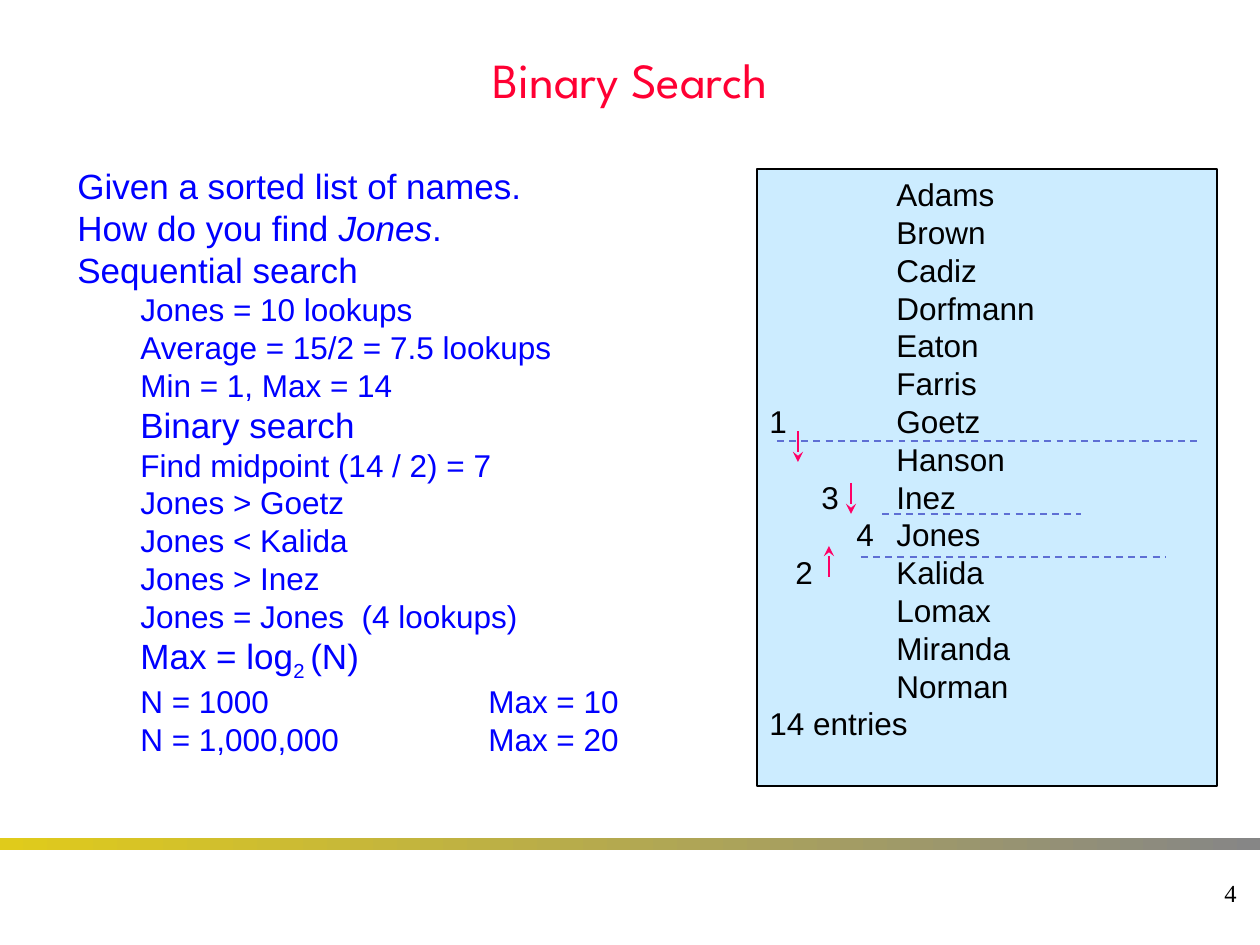
from dataclasses import dataclass
from typing import Optional

from lxml import etree
from pptx import Presentation
from pptx import util as u
from pptx.dml.color import RGBColor
from pptx.enum import dml, shapes, text
from pptx.oxml.ns import qn

PX = 914400 / 126
BLUE = "0000FF"
BLACK = "000000"
DASH_BLUE = "5E6FD4"
ARROW_PINK = "FF0066"


@dataclass
class Box:
    left: int
    top: int
    width: int
    height: int


@dataclass
class Line:
    x1: int
    y1: int
    x2: int
    y2: int
    color: str
    arrow: bool = False


@dataclass
class Style:
    size: int
    color: str
    face: str = "Arial"
    align: text.PP_ALIGN = text.PP_ALIGN.LEFT


@dataclass
class Point:
    words: str
    size: int = 18
    indent: int = 63
    italic: Optional[str] = None
    subscript: Optional[str] = None


def px(length: int) -> u.Emu:
    return u.Emu(round(length * PX))


def rgb(value: str) -> RGBColor:
    return RGBColor.from_string(value)


def place(box: Box) -> tuple:
    return px(box.left), px(box.top), px(box.width), px(box.height)


def add_rect(slide, box: Box):
    rect = slide.shapes.add_shape(shapes.MSO_SHAPE.RECTANGLE, *place(box))
    rect.shadow.inherit = False
    return rect


def add_text(slide, box: Box, anchor: text.MSO_ANCHOR):
    frame = slide.shapes.add_textbox(*place(box)).text_frame
    frame.word_wrap = True
    frame.vertical_anchor = anchor
    return frame


def next_paragraph(frame, index: int):
    return frame.add_paragraph() if index else frame.paragraphs[0]


def format_paragraph(paragraph, style: Style, tabs: tuple = (), indent: int = 0) -> None:
    props = paragraph._p.get_or_add_pPr()
    if indent:
        props.set("marL", str(px(indent)))
    if tabs:
        stops = etree.SubElement(props, qn("a:tabLst"))
        for stop in tabs:
            etree.SubElement(stops, qn("a:tab"), pos=str(px(stop)), algn="l")
    paragraph.alignment = style.align
    paragraph.font.size = u.Pt(style.size)
    paragraph.font.name = style.face
    paragraph.font.color.rgb = rgb(style.color)


def add_run(paragraph, words: str):
    run = paragraph.add_run()
    run.text = words
    return run


def add_label(slide, box: Box, words: str, style: Style) -> None:
    paragraph = add_text(slide, box, text.MSO_ANCHOR.MIDDLE).paragraphs[0]
    format_paragraph(paragraph, style)
    add_run(paragraph, words)


def add_point(paragraph, point: Point) -> None:
    format_paragraph(paragraph, Style(point.size, BLUE), (348,), point.indent)
    special = point.italic or point.subscript
    if not special:
        add_run(paragraph, point.words)
        return
    before, after = point.words.split(special)
    add_run(paragraph, before)
    run = add_run(paragraph, special)
    if point.italic:
        run.font.italic = True
    else:
        run._r.get_or_add_rPr().set("baseline", "-25000")
    add_run(paragraph, after)


def add_line(slide, line: Line) -> None:
    connector = slide.shapes.add_connector(
        shapes.MSO_CONNECTOR.STRAIGHT, px(line.x1), px(line.y1), px(line.x2), px(line.y2))
    connector.line.color.rgb = rgb(line.color)
    connector.line.width = u.Pt(1)
    properties = connector._element.spPr
    if line.arrow:
        etree.SubElement(properties.find(qn("a:ln")), qn("a:tailEnd"), type="stealth")
    else:
        connector.line.dash_style = dml.MSO_LINE.DASH
    etree.SubElement(properties, qn("a:effectLst"))


POINTS = [
    Point("Given a sorted list of names.", 20, 0),
    Point("How do you find Jones.", 20, 0, italic="Jones"),
    Point("Sequential search", 20, 0),
    Point("Jones = 10 lookups"),
    Point("Average = 15/2 = 7.5 lookups"),
    Point("Min = 1, Max = 14"),
    Point("Binary search", 20),
    Point("Find midpoint (14 / 2) = 7"),
    Point("Jones > Goetz"),
    Point("Jones < Kalida"),
    Point("Jones > Inez"),
    Point("Jones = Jones  (4 lookups)"),
    Point("Max = log2 (N)", 20, subscript="2 "),
    Point("N = 1000\tMax = 10"),
    Point("N = 1,000,000\tMax = 20"),
]
NAMES = ["Adams", "Brown", "Cadiz", "Dorfmann", "Eaton", "Farris", "Goetz", "Hanson",
         "Inez", "Jones", "Kalida", "Lomax", "Miranda", "Norman"]
NAME_TAB = 127
LOOKUPS = {"Goetz": ("1", 0), "Kalida": ("2", 26), "Inez": ("3", 52), "Jones": ("4", 87)}
SEARCH_LINES = [
    Line(777, 441, 1197, 441, DASH_BLUE),
    Line(861, 557, 1166, 557, DASH_BLUE),
    Line(882, 514, 1081, 514, DASH_BLUE),
    Line(798, 431, 798, 462, ARROW_PINK, True),
    Line(829, 577, 829, 546, ARROW_PINK, True),
    Line(851, 483, 851, 514, ARROW_PINK, True),
]


def add_name_list(slide, box: Box) -> None:
    panel = add_rect(slide, box)
    panel.fill.solid()
    panel.fill.fore_color.rgb = rgb("CCECFF")
    panel.line.color.rgb = rgb(BLACK)
    panel.line.width = u.Pt(1)
    frame = panel.text_frame
    frame.word_wrap = True
    frame.vertical_anchor = text.MSO_ANCHOR.TOP
    for index, name in enumerate([*NAMES, f"{len(NAMES)} entries"]):
        step, offset = LOOKUPS.get(name, ("", 0))
        paragraph = next_paragraph(frame, index)
        tabs = (offset, NAME_TAB) if offset else (NAME_TAB,)
        format_paragraph(paragraph, Style(18, BLACK), tabs)
        lead = "\t" if offset else ""
        add_run(paragraph, f"{lead}{step}\t{name}" if name in NAMES else name)


def main() -> None:
    deck = Presentation()
    deck.slide_width, deck.slide_height = px(1260), px(945)
    slide = deck.slides.add_slide(deck.slide_layouts[6])

    divider = add_rect(slide, Box(0, 838, 1260, 12))
    divider.line.fill.background()
    divider.fill.gradient()
    divider.fill.gradient_angle = 0
    for stop, color in zip(divider.fill.gradient_stops, ("E0CB1B", "868686")):
        stop.color.rgb = rgb(color)

    add_label(slide, Box(0, 0, 1260, 158), "Binary Search",
              Style(28, "FF0033", "League Spartan", text.PP_ALIGN.CENTER))
    add_label(slide, Box(987, 861, 262, 63), "4",
              Style(14, BLACK, "Times New Roman", text.PP_ALIGN.RIGHT))
    add_name_list(slide, Box(757, 169, 460, 617))
    for line in SEARCH_LINES:
        add_line(slide, line)
    notes = add_text(slide, Box(65, 158, 630, 606), text.MSO_ANCHOR.TOP)
    for index, point in enumerate(POINTS):
        add_point(next_paragraph(notes, index), point)
    deck.save("out.pptx")


if __name__ == "__main__":
    main()
